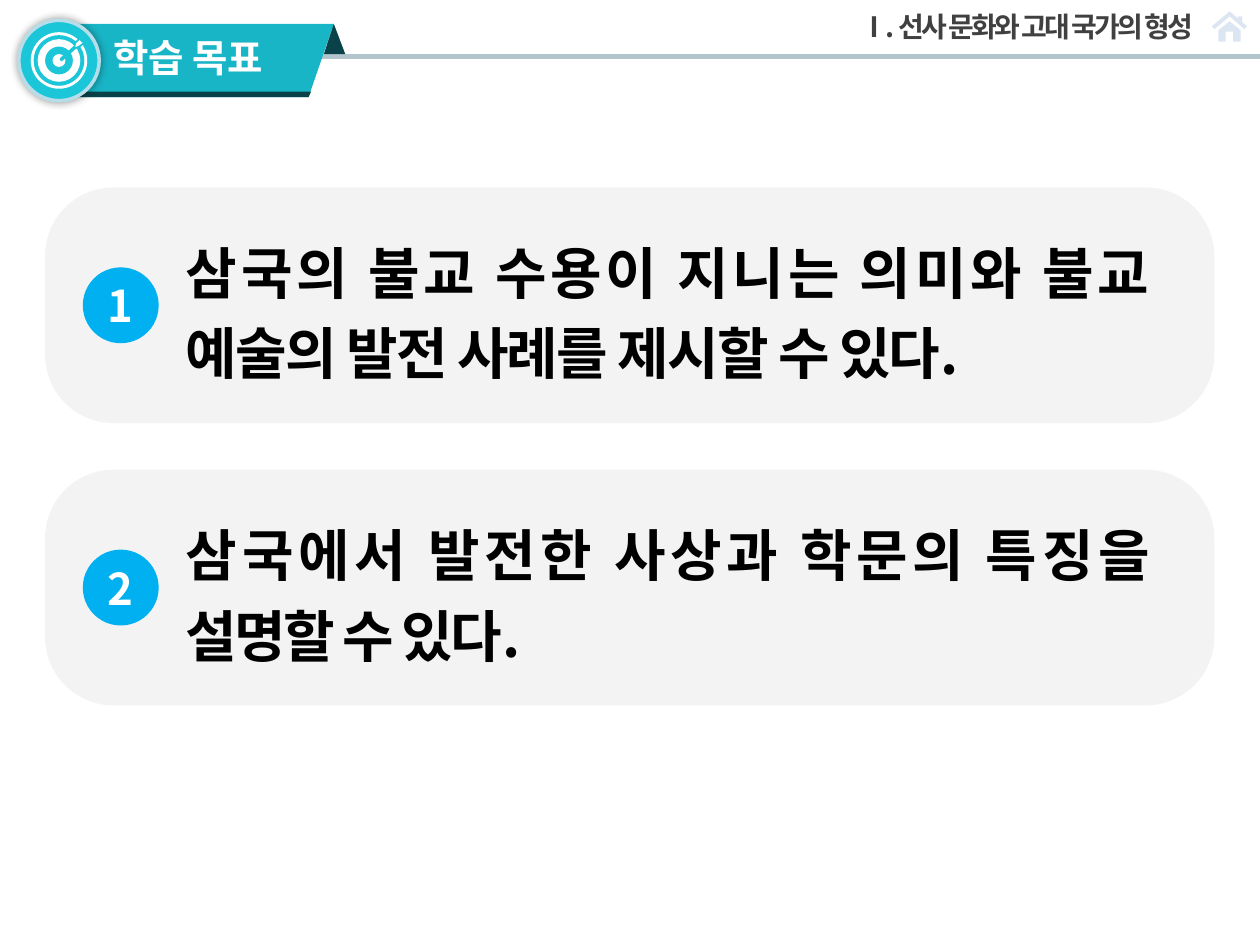
from lxml import etree
from pptx import Presentation
from pptx.dml.color import RGBColor
from pptx.enum.shapes import MSO_SHAPE as Shape
from pptx.enum.text import MSO_ANCHOR as Anchor, PP_ALIGN as Align
from pptx.oxml import parse_xml
from pptx.oxml.ns import nsdecls, qn
from pptx.util import Cm, Pt

FONT = "Noto Sans CJK KR"
COLORS = {
    "white": "FFFFFF", "black": "000000", "chapter": "404040", "home": "DCE6F2",
    "rule": "B2C5CC", "banner": "18B5C6", "fold": "094349", "badge": "1AC6D8",
    "badge_edge": "B7DEE8", "card": "F3F3F3", "number": "00B0F0",
}
GOALS = [
    ("삼국의 불교 수용이 지니는 의미와 불교 예술의 발전 사례를 제시할 수 있다.", -1),
    ("삼국에서 발전한 사상과 학문의 특징을 설명할 수 있다.", -1.5),
]


def rgb(name):
    return RGBColor.from_string(COLORS[name])


def paint(shape, color, edge=None, edge_width=0):
    shape.shadow.inherit = False
    shape.fill.solid()
    shape.fill.fore_color.rgb = rgb(color)
    if edge:
        shape.line.color.rgb = rgb(edge)
        shape.line.width = Pt(edge_width)
    else:
        shape.line.fill.background()
    return shape


def add_block(shapes, kind, left, top, width, height, color, **edging):
    block = shapes.add_shape(kind, Cm(left), Cm(top), Cm(width), Cm(height))
    return paint(block, color, **edging)


def add_outline(shapes, left, top, points, color, **edging):
    corners = [(Cm(left + x), Cm(top + y)) for x, y in points]
    builder = shapes.build_freeform(*corners[0])
    builder.add_line_segments(corners[1:], close=True)
    return paint(builder.convert_to_shape(), color, **edging)


def add_box(shapes, left, top, width, height):
    return shapes.add_textbox(Cm(left), Cm(top), Cm(width), Cm(height))


def write(shape, text, size, color, align=Align.LEFT, spacing=0, leading=1.0,
          insets=(0, 0, 0, 0)):
    frame = shape.text_frame
    frame.word_wrap = True
    frame.vertical_anchor = Anchor.MIDDLE
    (frame.margin_left, frame.margin_top,
     frame.margin_right, frame.margin_bottom) = map(Cm, insets)
    paragraph = frame.paragraphs[0]
    paragraph.alignment = align
    paragraph.line_spacing = leading
    run = paragraph.add_run()
    run.text = text
    run.font.size = Pt(size)
    run.font.bold = True
    run.font.name = FONT
    run.font.color.rgb = rgb(color)
    properties = run._r.get_or_add_rPr()
    properties.set("spc", str(int(spacing * 100)))
    etree.SubElement(properties, qn("a:ea")).set("typeface", FONT)


def add_glow(shape):
    properties = shape._element.spPr
    properties.remove(properties.find(qn("a:effectLst")))
    properties.append(parse_xml(
        f'<a:effectLst {nsdecls("a")}><a:outerShdw blurRad="{Pt(5)}" dist="0" dir="0">'
        '<a:srgbClr val="000000"><a:alpha val="40000"/></a:srgbClr>'
        '</a:outerShdw></a:effectLst>'))


def draw_home(slide, left, top):
    home = slide.shapes.add_group_shape().shapes
    roof = [(0, 0.3), (0.36, 0), (0.71, 0.3), (0.66, 0.36), (0.36, 0.1), (0.05, 0.36)]
    walls = [(0.13, 0.38), (0.36, 0.2), (0.58, 0.38), (0.58, 0.61), (0.43, 0.61),
             (0.43, 0.41), (0.28, 0.41), (0.28, 0.61), (0.13, 0.61)]
    for points in (roof, walls):
        add_outline(home, left, top, points, "home")
    add_block(home, Shape.RECTANGLE, left + 0.53, top + 0.1, 0.08, 0.15, "home")


def draw_header(slide, left, top, width, height):
    add_block(slide.shapes, Shape.RECTANGLE, left, top, width, height, "white")
    chapter = add_box(slide.shapes, left + 14.88, top, 9.37, 1.07)
    write(chapter, "Ⅰ. 선사 문화와 고대 국가의 형성", 16, "chapter",
          align=Align.RIGHT, spacing=-1.5, insets=(0, 0, 0.2, 0))
    draw_home(slide, left + 24.43, top + 0.23)
    add_block(slide.shapes, Shape.RECTANGLE, left + 0.99, top + 1.09,
              width - 0.99, 0.1, "rule")


def draw_banner(slide, left, top, width, height):
    banner = slide.shapes.add_group_shape().shapes
    band = [(0, 0), (width, 0), (width - 0.51, height), (0, height)]
    edge = [(0, height - 0.11), (width - 0.46, height - 0.11),
            (width - 0.51, height), (0, height)]
    fold = [(width, 0), (width + 0.23, 0.61), (width - 0.2, 0.61)]
    for points, color in ((band, "banner"), (edge, "fold"), (fold, "fold")):
        add_outline(banner, left, top, points, color)
    title = add_box(banner, left + 0.68, top + 0.08, 4.22, 1.19)
    write(title, "학습 목표", 22, "white", insets=(0.25, 0, 0.25, 0))


def draw_badge(slide, left, top, size):
    badge = slide.shapes.add_group_shape().shapes
    disc = add_block(badge, Shape.OVAL, left, top, size, size, "badge",
                     edge="badge_edge", edge_width=2)
    add_glow(disc)
    for index, ring in enumerate((1.14, 1.02, 0.86, 0.56, 0.26)):
        gap = (size - ring) / 2
        add_block(badge, Shape.OVAL, left + gap, top + gap, ring, ring,
                  "badge" if index % 2 else "white")
    arrow = [(1.27, 0.33), (1.25, 0.4), (1.32, 0.35), (1.35, 0.38), (1.27, 0.43),
             (1.35, 0.43), (1.22, 0.53), (1.14, 0.56), (0.86, 0.81), (0.84, 0.78),
             (1.12, 0.53), (1.14, 0.45)]
    add_outline(badge, left, top, arrow, "white", edge="badge", edge_width=1)


def draw_goal(slide, left, top, width, height, number, goal, spacing):
    group = slide.shapes.add_group_shape().shapes
    card = add_block(group, Shape.ROUNDED_RECTANGLE, left, top, width, height, "card")
    card.adjustments[0] = 0.29
    sentence = add_box(group, left + 2.59, top + 0.64, 19.89, 3.48)
    write(sentence, goal, 32, "black", align=Align.JUSTIFY, spacing=spacing,
          leading=1.2, insets=(0.25, 0.13, 0.25, 0.13))
    disc = 1.53
    marker = add_block(group, Shape.OVAL, left + 0.76, top + (height - disc) / 2,
                       disc, disc, "number")
    write(marker, str(number), 25, "white", align=Align.CENTER, spacing=-1.5)


def main():
    deck = Presentation()
    deck.slide_width, deck.slide_height = Cm(25.4), Cm(19.05)
    slide = deck.slides.add_slide(deck.slide_layouts[6])
    draw_header(slide, 0, 0, 25.4, 1.17)
    draw_banner(slide, 1.35, 0.48, 5.38, 1.48)
    draw_badge(slide, 0.38, 0.41, 1.62)
    for index, (goal, spacing) in enumerate(GOALS):
        draw_goal(slide, 0.91, 3.78 + 5.69 * index, 23.57, 4.75,
                  index + 1, goal, spacing)
    deck.save("out.pptx")


if __name__ == "__main__":
    main()
